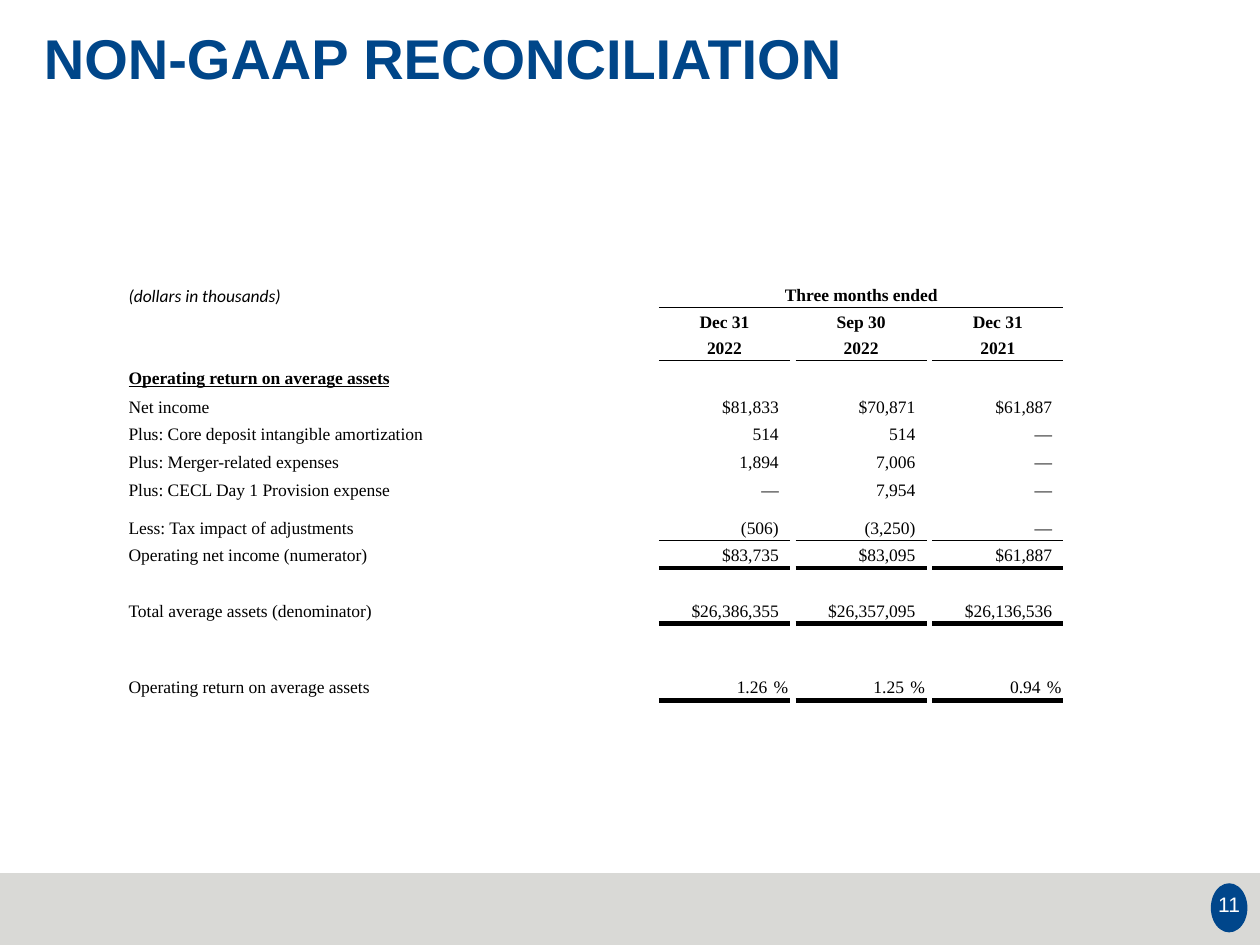
from lxml import etree
from pptx import Presentation, util as u
from pptx.dml.color import RGBColor
from pptx.enum import shapes, text
from pptx.oxml import ns

UNIT = u.Inches(0.1)
NAVY = RGBColor(0x00, 0x46, 0x8B)
TITLE_BLUE = RGBColor(0x00, 0x46, 0x89)
GREY = RGBColor(0xD9, 0xD9, 0xD6)
WHITE = RGBColor(0xFF, 0xFF, 0xFF)
BLACK = RGBColor(0, 0, 0)

COLS = [36.8, 5.6, 10.4, 0.45, 10.4, 0.45, 10.4]
ROWS = [2.1, 2.2, 2, 0.4, 2, 2.3, 2.2, 2.2, 2.2, 3, 2.2, 2.2, 2.2, 2.3, 3.8, 2.2]
VALUE_COLS = (2, 4, 6)
HEADS = {1: ("Dec 31", "Sep 30", "Dec 31"), 2: ("2022", "2022", "2021")}
FIGURES = {
    5: ("Net income", "$81,833", "$70,871", "$61,887"),
    6: ("Plus: Core deposit intangible amortization", "514", "514", "—"),
    7: ("Plus: Merger-related expenses", "1,894", "7,006", "—"),
    8: ("Plus: CECL Day 1 Provision expense", "—", "7,954", "—"),
    9: ("Less: Tax impact of adjustments", "(506)", "(3,250)", "—"),
    10: ("Operating net income (numerator)", "$83,735", "$83,095", "$61,887"),
    12: ("Total average assets (denominator)", "$26,386,355", "$26,357,095", "$26,136,536"),
    14: ("Operating return on average assets", "\t1.26\t%", "\t1.25\t%", "\t0.94\t%"),
}
RULES = {0: 1, 2: 1, 9: 1, 10: 3, 12: 3, 14: 3}
PERCENT_TABS = {"r": 0.86, "l": 0.91}

BODY = dict(name="Times New Roman", size=u.Pt(10))
NOTE = dict(name="Calibri", size=u.Pt(10), italic=True)
HEAD = dict(BODY, bold=True)
SECTION = dict(HEAD, underline=True)
TITLE = dict(name="Arial", size=u.Pt(32), bold=True)
NUMBER = dict(name="Arial", size=u.Pt(12))


def grid(*values):
    """Turn grid units into slide lengths."""
    return [round(v * UNIT) for v in values]


def write(p, words, color, fmt, align=text.PP_ALIGN.LEFT):
    """Put one formatted run into a paragraph."""
    p.alignment = align
    r = p.add_run()
    r.text = words
    r.font.color.rgb = color
    for name, value in fmt.items():
        setattr(r.font, name, value)


def add_label(s, box, words, color, fmt, align, anchor):
    """Place a one-line text box and return its paragraph."""
    tf = s.shapes.add_textbox(*grid(*box)).text_frame
    tf.word_wrap = True
    tf.vertical_anchor = anchor
    tf.margin_top = u.Inches(0.06)
    tf.margin_bottom = u.Inches(0.1)
    write(tf.paragraphs[0], words, color, fmt, align)
    return tf.paragraphs[0]


def add_title(s, box):
    """Write the slide heading."""
    p = add_label(s, box, "NON-GAAP RECONCILIATION", TITLE_BLUE, TITLE,
                  text.PP_ALIGN.LEFT, text.MSO_ANCHOR.TOP)
    p.line_spacing = 0.9


def add_footer(s, box):
    """Draw the footer band with its page number badge."""
    x, y, w, h = box
    kinds = shapes.MSO_SHAPE
    badge = (x + w - 3.9, y + 0.8, 2.9, 3.9)
    for kind, area, color in ((kinds.RECTANGLE, box, GREY), (kinds.OVAL, badge, NAVY)):
        sp = s.shapes.add_shape(kind, *grid(*area))
        sp.shadow.inherit = False
        sp.fill.solid()
        sp.fill.fore_color.rgb = color
        sp.line.fill.background()
    add_label(s, (x + w - 4.8, y + 0.7, 4.7, 3.9), "11", WHITE, NUMBER,
              text.PP_ALIGN.CENTER, text.MSO_ANCHOR.MIDDLE)


def add_border(tcPr, side, color, width):
    """Add one border line to a cell, or clear it when there is no colour."""
    ln = etree.SubElement(tcPr, ns.qn(f"a:ln{side}"), w=str(u.Pt(width)))
    if color is None:
        etree.SubElement(ln, ns.qn("a:noFill"))
    else:
        fill = etree.SubElement(ln, ns.qn("a:solidFill"))
        etree.SubElement(fill, ns.qn("a:srgbClr"), val=str(color))


def style_cell(cell, row, col):
    """Clear a cell and give it the rules of its row."""
    def rule(above):
        ruled = col in VALUE_COLS or (above == 0 and col > 2)
        return (BLACK, RULES[above]) if ruled and above in RULES else (None, 1)

    tcPr = cell._tc.get_or_add_tcPr()
    for side, line in zip("LRTB", ((None, 1), (None, 1), rule(row - 1), rule(row))):
        add_border(tcPr, side, *line)
    cell.fill.background()
    cell.vertical_anchor = text.MSO_ANCHOR.BOTTOM
    for side in ("left", "right", "top", "bottom"):
        setattr(cell, f"margin_{side}", 0)


def fill_cell(cell, words, fmt, align=text.PP_ALIGN.LEFT):
    """Write a table cell, lining up figures and percent signs."""
    p = cell.text_frame.paragraphs[0]
    cell.margin_bottom = u.Inches(0.02)
    if "%" in words:
        align = text.PP_ALIGN.LEFT
        tabs = etree.SubElement(p._p.get_or_add_pPr(), ns.qn("a:tabLst"))
        for side, stop in PERCENT_TABS.items():
            etree.SubElement(tabs, ns.qn("a:tab"), pos=str(u.Inches(stop)), algn=side)
    elif align == text.PP_ALIGN.RIGHT:
        cell.margin_right = u.Inches(0.09)
    else:
        cell.margin_left = cell.margin_right = u.Inches(0.03)
    write(p, words, BLACK, fmt, align)


def add_reconciliation(s, box):
    """Build the table of operating return on average assets."""
    t = s.shapes.add_table(len(ROWS), len(COLS), *grid(*box)).table
    t.first_row = t.horz_banding = False
    for parts, name, sizes in ((t.columns, "width", COLS), (t.rows, "height", ROWS)):
        for part, size in zip(parts, grid(*sizes)):
            setattr(part, name, size)
    for i in range(len(ROWS)):
        for j in range(len(COLS)):
            style_cell(t.cell(i, j), i, j)
    for row, first, last in ((0, 2, 6), (2, 0, 1), (4, 0, 4)):
        t.cell(row, first).merge(t.cell(row, last))
    fill_cell(t.cell(0, 0), "(dollars in thousands)", NOTE)
    t.cell(0, 0).margin_bottom = 0
    fill_cell(t.cell(0, 2), "Three months ended", HEAD, text.PP_ALIGN.CENTER)
    fill_cell(t.cell(4, 0), "Operating return on average assets", SECTION)
    for row, heads in HEADS.items():
        for col, head in zip(VALUE_COLS, heads):
            fill_cell(t.cell(row, col), head, HEAD, text.PP_ALIGN.CENTER)
    for row, (label, *values) in FIGURES.items():
        fill_cell(t.cell(row, 0), label, BODY)
        for col, value in zip(VALUE_COLS, values):
            fill_cell(t.cell(row, col), value, BODY, text.PP_ALIGN.RIGHT)
    for cell in t.iter_cells():
        p = cell.text_frame.paragraphs[0]
        if not p.runs:
            etree.SubElement(p._p, ns.qn("a:endParaRPr"), sz="100")


def main():
    """Build and save the slide."""
    prs = Presentation()
    prs.slide_width, prs.slide_height = grid(100, 75)
    s = prs.slides.add_slide(prs.slide_layouts[6])
    add_footer(s, (0, 69.3, 100, 5.7))
    add_title(s, (2.5, 1.9, 96.7, 11.4))
    add_reconciliation(s, (9.9, 22.3, sum(COLS), sum(ROWS)))
    prs.save("out.pptx")


if __name__ == "__main__":
    main()
